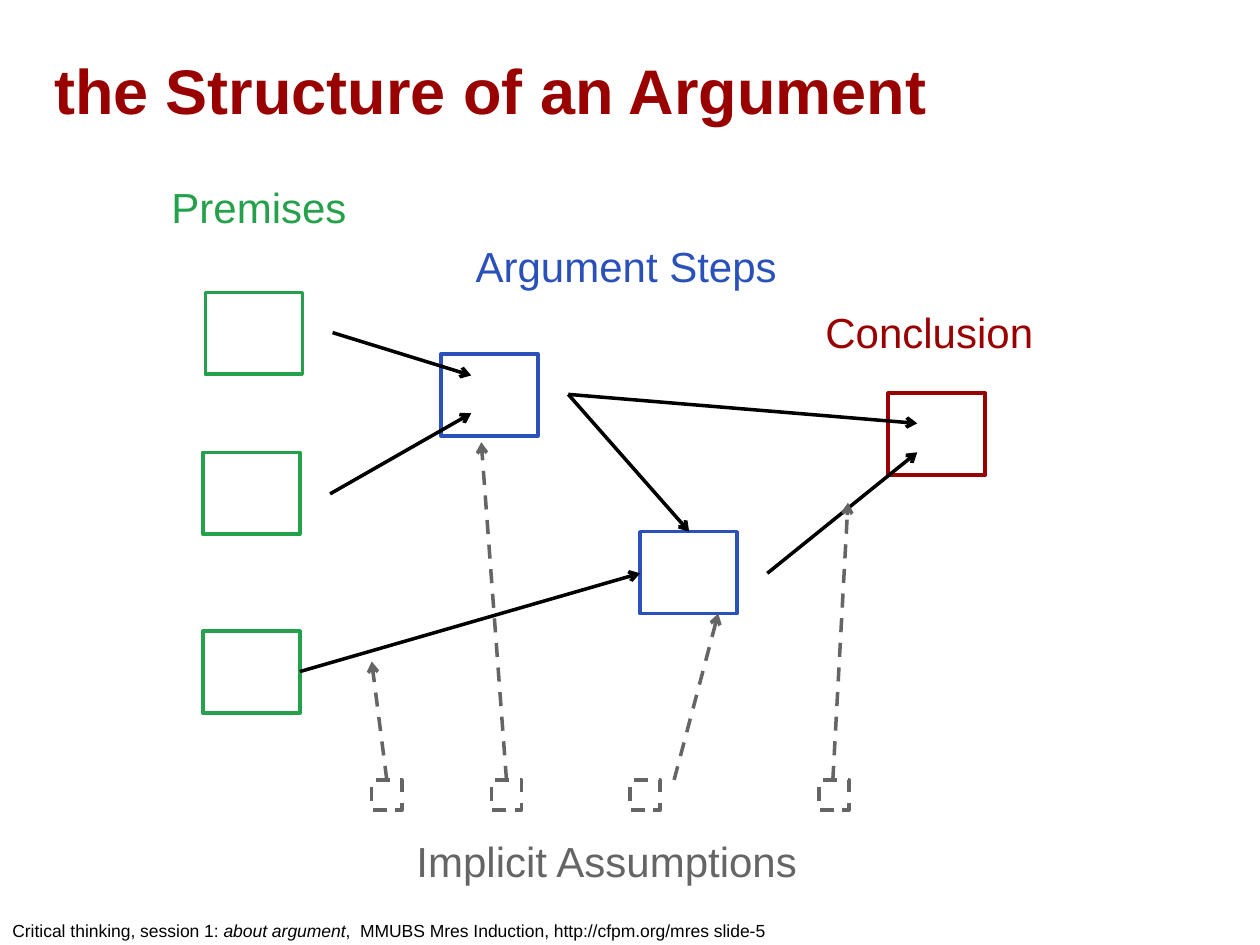
from dataclasses import dataclass

from lxml.etree import SubElement
from pptx import Presentation
from pptx.dml.color import RGBColor as Rgb
from pptx.enum.dml import MSO_LINE_DASH_STYLE as Dash
from pptx.enum.shapes import MSO_CONNECTOR_TYPE as Connector, MSO_SHAPE as Shape
from pptx.enum.text import MSO_ANCHOR as Anchor, MSO_AUTO_SIZE as AutoSize, PP_ALIGN as Align
from pptx.oxml.ns import qn
from pptx.util import Inches, Pt


@dataclass(frozen=True)
class Theme:
    font: str = "Arial"
    ink: str = "000000"
    premise: str = "25A14B"
    step: str = "2A50BA"
    conclusion: str = "990000"
    assumption: str = "656565"
    title_size: int = 36
    label_size: int = 24
    footer_size: int = 10
    line_width: int = 2


class ArgumentSlide:
    def __init__(self, slide, theme):
        self.slide = slide
        self.theme = theme

    def add_run(self, paragraph, text, size, color, bold=False, italic=False):
        run = paragraph.add_run()
        run.text = text
        font = run.font
        font.name = self.theme.font
        font.size = Pt(size)
        font.bold = bold
        font.italic = italic
        font.color.rgb = Rgb.from_string(color)

    def title(self, text, left, top, width, height):
        title = self.slide.shapes.title
        title.left, title.top = Inches(left), Inches(top)
        title.width, title.height = Inches(width), Inches(height)
        frame = title.text_frame
        frame.vertical_anchor = Anchor.MIDDLE
        paragraph = frame.paragraphs[0]
        paragraph.alignment = Align.LEFT
        self.add_run(paragraph, text, self.theme.title_size, self.theme.conclusion, bold=True)

    def text_frame(self, left, top, width, height):
        lengths = map(Inches, (left, top, width, height))
        return self.slide.shapes.add_textbox(*lengths).text_frame

    def label(self, text, left, top, width, color):
        frame = self.text_frame(left, top, width, 0.5)
        frame.word_wrap = False
        frame.auto_size = AutoSize.SHAPE_TO_FIT_TEXT
        paragraph = frame.paragraphs[0]
        paragraph.alignment = Align.CENTER
        self.add_run(paragraph, text, self.theme.label_size, color)

    def footer(self, parts):
        frame = self.text_frame(0, 7.25, 9.83, 0.25)
        frame.word_wrap = True
        for text, italic in parts:
            self.add_run(frame.paragraphs[0], text, self.theme.footer_size,
                         self.theme.ink, italic=italic)

    def style_line(self, line, color, dashed):
        line.color.rgb = Rgb.from_string(color)
        line.width = Pt(self.theme.line_width)
        if dashed:
            line.dash_style = Dash.DASH

    def box(self, left, top, color, width=0.77, height=0.65, dashed=False):
        box = self.slide.shapes.add_shape(
            Shape.RECTANGLE, *map(Inches, (left, top, width, height)))
        box.shadow.inherit = False
        box.fill.background()
        self.style_line(box.line, color, dashed)

    def arrow(self, start, end, color, dashed=False):
        arrow = self.slide.shapes.add_connector(
            Connector.STRAIGHT, *map(Inches, (*start, *end)))
        self.style_line(arrow.line, color, dashed)
        properties = arrow.element.spPr
        SubElement(properties.find(qn("a:ln")), qn("a:tailEnd"), type="arrow")
        SubElement(properties, qn("a:effectLst"))


def main():
    theme = Theme()
    presentation = Presentation()
    presentation.slide_width, presentation.slide_height = Inches(10), Inches(7.5)
    title_only = presentation.slide_layouts[5]
    argument = ArgumentSlide(presentation.slides.add_slide(title_only), theme)

    argument.title("the Structure of an Argument", 0.33, 0.25, 8.42, 0.92)
    argument.footer([
        ("Critical thinking, session 1: ", False),
        ("about argument", True),
        (",  MMUBS Mres Induction, http://cfpm.org/mres slide-5", False),
    ])

    statements = [
        (theme.step, [(3.5, 2.81), (5.08, 4.22)]),
        (theme.premise, [(1.63, 2.32), (1.61, 3.59), (1.61, 5.01)]),
        (theme.conclusion, [(7.05, 3.12)]),
    ]
    for color, corners in statements:
        for left, top in corners:
            argument.box(left, top, color)

    first_step_exit = (4.51, 3.13)
    inferences = [
        ((2.64, 2.64), (3.74, 2.98)),
        ((2.62, 3.92), (3.74, 3.28)),
        ((2.38, 5.33), (5.08, 4.55)),
        (first_step_exit, (5.47, 4.22)),
        (first_step_exit, (7.28, 3.36)),
        ((6.09, 4.55), (7.28, 3.59)),
    ]
    for start, end in inferences:
        argument.arrow(start, end, theme.ink)

    assumption_top, assumption_size = 6.19, 0.24
    assumptions = [
        (2.95, 3.07, (2.95, 5.25)),
        (3.9, 4.02, (3.82, 3.51)),
        (5, 5.35, (5.7, 4.87)),
        (6.5, 6.61, (6.73, 3.99)),
    ]
    for left, arrow_start, target in assumptions:
        argument.box(left, assumption_top, theme.assumption,
                     assumption_size, assumption_size, dashed=True)
        argument.arrow((arrow_start, assumption_top), target, theme.assumption, dashed=True)

    labels = [
        ("Premises", 1.25, 1.39, 1.61, theme.premise),
        ("Argument Steps", 3.66, 1.86, 2.62, theme.step),
        ("Conclusion", 6.44, 2.38, 1.87, theme.conclusion),
        ("Implicit Assumptions", 3.19, 6.58, 3.25, theme.assumption),
    ]
    for label in labels:
        argument.label(*label)

    presentation.save("out.pptx")


if __name__ == "__main__":
    main()
